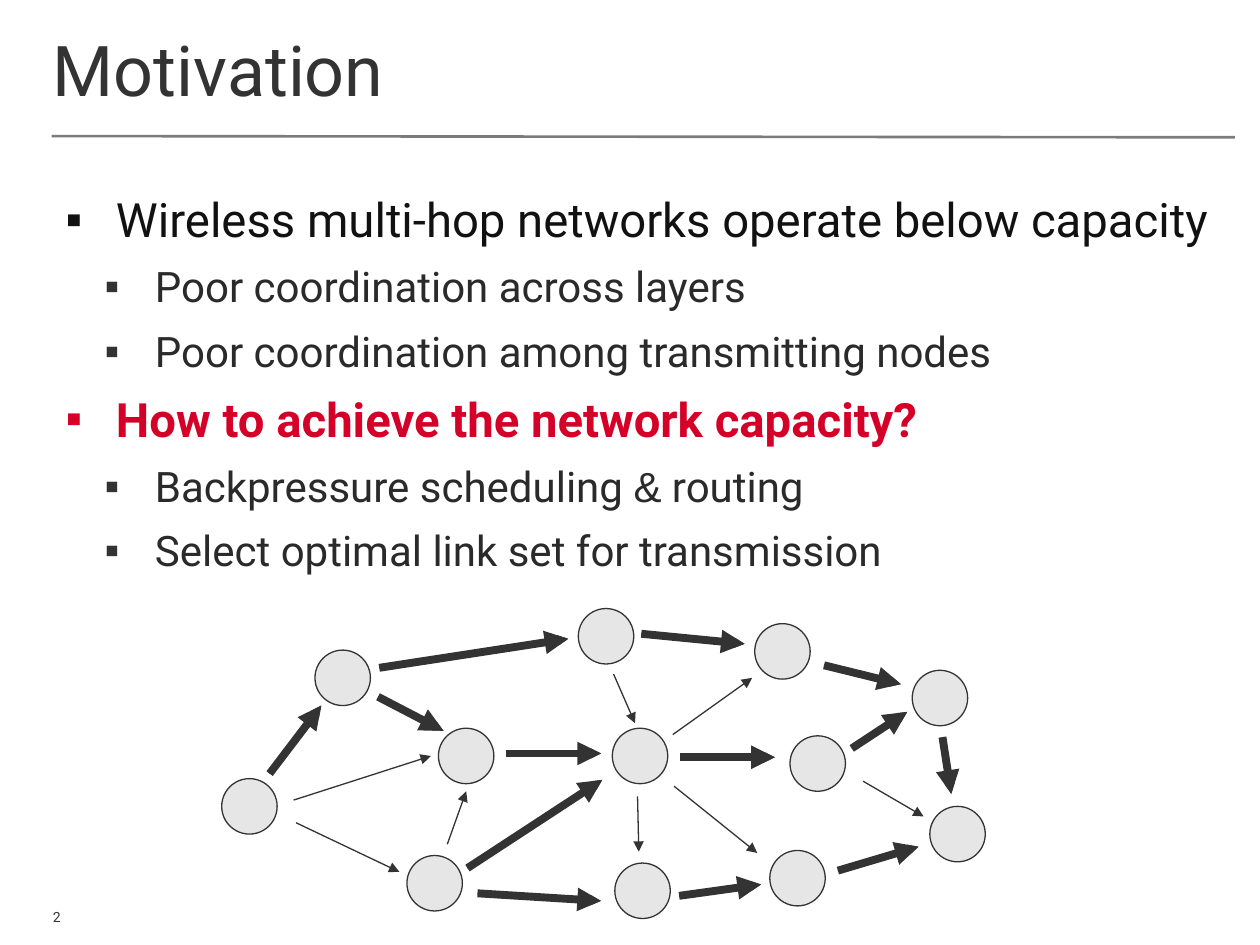
import dataclasses

import lxml.etree
import pptx
import pptx.dml.color
import pptx.enum.shapes
import pptx.enum.text
import pptx.oxml.ns
import pptx.util

COLS, ROWS = 100, 75  # grid laid over the slide
FONT = "Roboto"
COLORS = {"ink": "333333", "body": "111111", "sub": "2A2A2A",
          "accent": "D40027", "rule": "7B7B7B", "node": "E6E6E6"}
NODE_SIZE = 4.4
THIN, THICK = 0.75, 4.5

prs = pptx.Presentation()
prs.slide_width, prs.slide_height = pptx.util.Inches(10), pptx.util.Inches(7.5)


@dataclasses.dataclass
class Bullet:
    text: str
    level: int = 1
    color: str = "sub"
    bold: bool = False


@dataclasses.dataclass
class Node:
    col: float
    row: float


@dataclasses.dataclass
class Link:
    start: tuple[float, float]
    end: tuple[float, float]
    selected: bool = False


BULLETS = [
    Bullet("Wireless multi-hop networks operate below capacity", 0, "body"),
    Bullet("Poor coordination across layers"),
    Bullet("Poor coordination among transmitting nodes"),
    Bullet("How to achieve the network capacity?", 0, "accent", True),
    Bullet("Backpressure scheduling & routing"),
    Bullet("Select optimal link set for transmission"),
]

NODES = [
    Node(17.6, 61.8), Node(25, 51.6), Node(34.8, 57.8), Node(32.3, 67.9),
    Node(45.9, 48.3), Node(48.6, 57.8), Node(48.8, 68.5), Node(59.9, 49.5),
    Node(62.7, 58.4), Node(61.1, 67.5), Node(72.4, 53.2), Node(73.8, 64),
]

LINKS = [
    Link((23.3, 63.5), (34.2, 60)),
    Link((23.5, 65.3), (31.7, 69.2)),
    Link((35.5, 67), (37, 62.8)),
    Link((48.7, 53.5), (50.4, 57.4)),
    Link((53.4, 58.3), (59.7, 53.8)),
    Link((53.5, 62.4), (60.1, 67.7)),
    Link((50.6, 63.2), (50.7, 67.6)),
    Link((68.5, 62), (73.3, 64.8)),
    Link((21.4, 61.4), (25.5, 56), True),
    Link((30.1, 53), (45.1, 50.7), True),
    Link((30, 55.3), (35.2, 58), True),
    Link((40.2, 59.8), (47.7, 59.8), True),
    Link((37.1, 68.9), (47.8, 61.9), True),
    Link((37.9, 70.9), (47.7, 71.5), True),
    Link((50.9, 50.3), (59.1, 51.1), True),
    Link((54, 60.1), (61.5, 60.1), True),
    Link((53.9, 71.1), (60.4, 70.2), True),
    Link((65.4, 52.8), (71.5, 54.3), True),
    Link((67.6, 59.4), (72, 56.5), True),
    Link((66.5, 69.1), (72.9, 67.2), True),
    Link((74.8, 58.5), (75.5, 63), True),
]


def x(col: float) -> int:
    return round(prs.slide_width * col / COLS)


def y(row: float) -> int:
    return round(prs.slide_height * row / ROWS)


def rgb(name: str) -> pptx.dml.color.RGBColor:
    return pptx.dml.color.RGBColor.from_string(COLORS[name])


def place(sp, col: float, row: float, cols: float, rows: float) -> None:
    sp.left, sp.top, sp.width, sp.height = x(col), y(row), x(cols), y(rows)


def set_frame(tf, anchor, inset: float = 0) -> None:
    tf.word_wrap = True
    tf.auto_size = pptx.enum.text.MSO_AUTO_SIZE.NONE
    tf.vertical_anchor = anchor
    tf.margin_left = tf.margin_right = 0
    tf.margin_top = tf.margin_bottom = y(inset)


def set_font(p, size: float, color: str, bold: bool = False) -> None:
    p.alignment = pptx.enum.text.PP_ALIGN.LEFT
    p.font.name, p.font.size, p.font.bold = FONT, pptx.util.Pt(size), bold
    p.font.color.rgb = rgb(color)


def add_child(parent, tag: str, **attrs: str):
    return lxml.etree.SubElement(parent, pptx.oxml.ns.qn(tag), attrs)


def add_bullet(p, item: Bullet) -> None:
    """Fill one paragraph of the list, with its square bullet."""
    p.level = item.level
    pPr = p._p.get_or_add_pPr()
    pPr.set("marL", str(x(8.1 if item.level else 5)))
    pPr.set("indent", str(x(-4)))
    clr = add_child(pPr, "a:buClr")
    add_child(clr, "a:srgbClr", val=COLORS["ink" if item.level else item.color])
    add_child(pPr, "a:buFont", typeface="Arial")
    add_child(pPr, "a:buChar", char="▪")
    set_font(p, 24 if item.level else 27, item.color, item.bold)
    before, ampersand, after = item.text.partition("&")
    p.add_run().text = before
    if ampersand:
        r = p.add_run()
        r.text, r.font.name = ampersand, "Arial"
        p.add_run().text = after


def add_line(s, start, end, color: str, width: float, arrow: bool = False) -> None:
    sp = s.shapes.add_connector(pptx.enum.shapes.MSO_CONNECTOR.STRAIGHT,
                                x(start[0]), y(start[1]), x(end[0]), y(end[1]))
    sp.line.color.rgb = rgb(color)
    sp.line.width = pptx.util.Pt(width)
    if arrow:
        add_child(sp.line._get_or_add_ln(), "a:tailEnd", type="triangle")
    add_child(sp._element.spPr, "a:effectLst")


def add_node(s, node: Node) -> None:
    sp = s.shapes.add_shape(pptx.enum.shapes.MSO_SHAPE.OVAL, x(node.col),
                            y(node.row), x(NODE_SIZE), y(NODE_SIZE))
    sp.shadow.inherit = False
    sp.fill.solid()
    sp.fill.fore_color.rgb = rgb("node")
    sp.line.color.rgb = rgb("ink")
    sp.line.width = pptx.util.Pt(THIN)


def main() -> None:
    s = prs.slides.add_slide(prs.slide_layouts[1])
    anchors = pptx.enum.text.MSO_ANCHOR

    # Title and rule
    title = s.shapes.title
    place(title, 4.2, 0, 93.9, 10.8)
    set_frame(title.text_frame, anchors.MIDDLE, 0.5)
    title.text_frame.text = "Motivation"
    set_font(title.text_frame.paragraphs[0], 40, "ink")
    add_line(s, (4.1, 10.8), (98, 10.9), "rule", 1.5)

    # Bulleted list
    body = s.placeholders[1]
    place(body, 4.2, 14.6, 93.9, 51.8)
    tf = body.text_frame
    set_frame(tf, anchors.TOP, 0.5)
    for i, item in enumerate(BULLETS):
        p = tf.add_paragraph() if i else tf.paragraphs[0]
        p.space_before = pptx.util.Pt(8 if i else 0)
        add_bullet(p, item)

    # Slide number
    number = s.shapes.add_textbox(x(4.2), y(71.7), x(3.2), y(1.7))
    set_frame(number.text_frame, anchors.BOTTOM)
    number.text_frame.text = "2"
    set_font(number.text_frame.paragraphs[0], 8, "ink")

    # Network: nodes, all links, then the selected links on top
    for node in NODES:
        add_node(s, node)
    for link in LINKS:
        add_line(s, link.start, link.end, "ink", THIN, arrow=True)
    for link in LINKS:
        if link.selected:
            add_line(s, link.start, link.end, "ink", THICK, arrow=True)

    prs.save("out.pptx")


if __name__ == "__main__":
    main()
